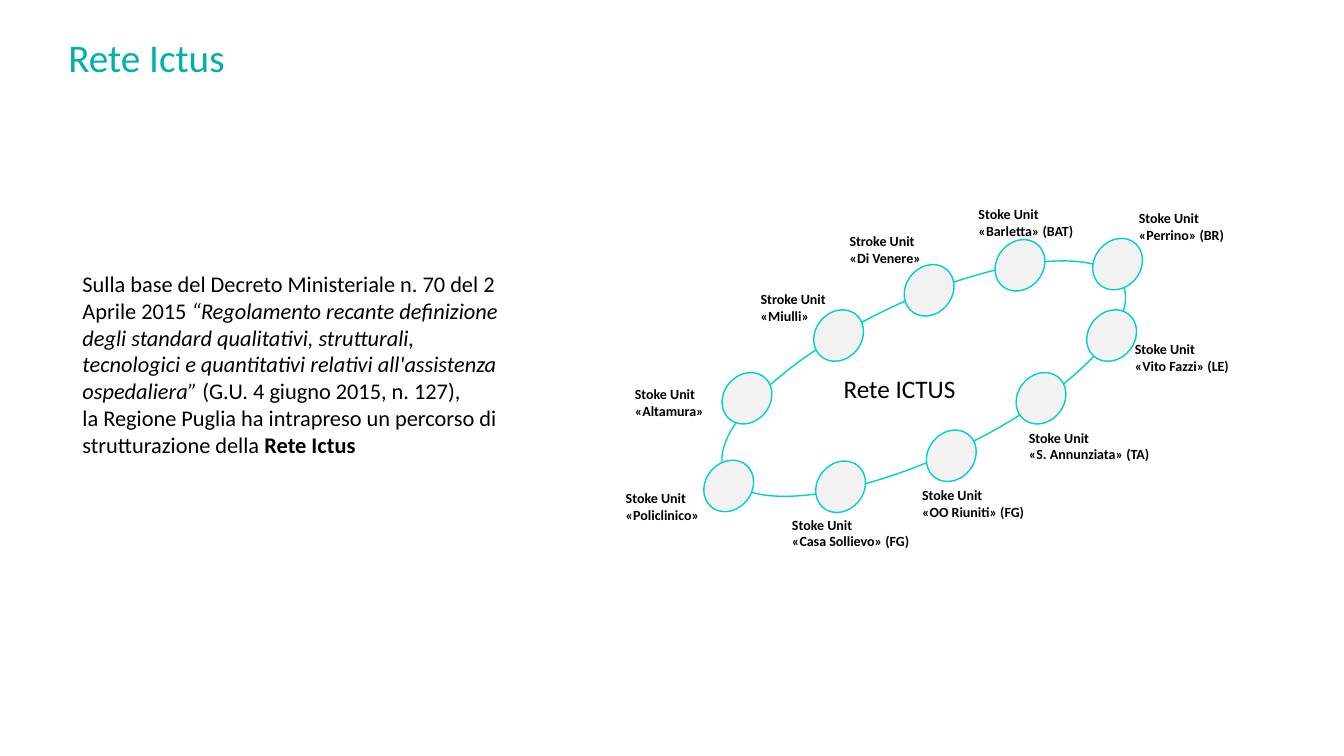
from pptx import Presentation
from pptx.dml.color import RGBColor
from pptx.enum.shapes import MSO_SHAPE
from pptx.enum.text import MSO_ANCHOR, MSO_AUTO_SIZE, PP_ALIGN
from pptx.util import Cm, Pt

TEAL = RGBColor(0x00, 0xB0, 0xAB)
AQUA = RGBColor(0x00, 0xD0, 0xCA)
PALE = RGBColor(0xF2, 0xF2, 0xF2)
BLACK = RGBColor(0x00, 0x00, 0x00)
FACE = "Calibri"

HEADING = "Rete Ictus"
DECREE = [
    [
        ("Sulla base del Decreto Ministeriale n. 70 del 2 Aprile 2015 ", ""),
        ("“Regolamento recante definizione degli standard qualitativi, strutturali, "
         "tecnologici e quantitativi relativi all'assistenza ospedaliera”", "italic"),
        (" (G.U. 4 giugno 2015, n. 127),", ""),
    ],
    [
        ("la Regione Puglia ha intrapreso un percorso di strutturazione della ", ""),
        ("Rete Ictus", "bold"),
    ],
]
NETWORK = "Rete ICTUS"
STROKE_UNITS = [
    ("Stoke Unit «Policlinico»", (17.68, 11.66), (15.52, 12.22, 3.07)),
    ("Stoke Unit «Altamura»", (18.14, 9.45), (15.75, 9.6, 3.07)),
    ("Stroke Unit\n«Miulli»", (20.45, 7.87), (18.92, 7.19, 3.07)),
    ("Stroke Unit\n«Di Venere»", (22.73, 6.73), (21.16, 5.74, 3.07)),
    ("Stoke Unit «Barletta» (BAT)", (25.02, 6.1), (24.41, 5.05, 3.53)),
    ("Stoke Unit «Perrino» (BR)", (27.48, 6.07), (28.45, 5.16, 3.07)),
    ("Stoke Unit\n«Vito Fazzi» (LE)", (27.33, 7.87), (28.35, 8.46, 3.38)),
    ("Stoke Unit\n«S. Annunziata» (TA)", (25.55, 9.45), (25.68, 10.69, 4.14)),
    ("Stoke Unit\n«OO Riuniti» (FG)", (23.29, 10.9), (22.99, 12.14, 4.14)),
    ("Stoke Unit\n«Casa Sollievo» (FG)", (20.5, 11.68), (19.71, 12.88, 4.14)),
]
NODE_WIDTH, NODE_HEIGHT, NODE_TURN = 1.37, 1.17, 309.2
LABEL_HEIGHT = 1.12


def style(paragraph, size, color=BLACK, bold=None):
    paragraph.font.name = FACE
    paragraph.font.size = Pt(size)
    paragraph.font.color.rgb = color
    paragraph.font.bold = bold


def add_oval(slide, left, top, width, height, turn, fill=None):
    oval = slide.shapes.add_shape(
        MSO_SHAPE.OVAL, Cm(left), Cm(top), Cm(width), Cm(height))
    oval.rotation = turn
    oval.shadow.inherit = False
    if fill is None:
        oval.fill.background()
    else:
        oval.fill.solid()
        oval.fill.fore_color.rgb = fill
    oval.line.color.rgb = AQUA
    oval.line.width = Pt(1)


def add_words(slide, left, top, width, height, words=""):
    frame = slide.shapes.add_textbox(
        Cm(left), Cm(top), Cm(width), Cm(height)).text_frame
    frame.word_wrap = True
    frame.text = words
    return frame


def add_heading(slide):
    heading = slide.shapes.title
    heading.left, heading.top = Cm(1.47), Cm(0.91)
    heading.width, heading.height = Cm(30.71), Cm(1.19)
    frame = heading.text_frame
    frame.text = HEADING
    frame.auto_size = MSO_AUTO_SIZE.NONE
    frame.vertical_anchor = MSO_ANCHOR.MIDDLE
    paragraph = frame.paragraphs[0]
    paragraph.alignment = PP_ALIGN.LEFT
    paragraph.line_spacing = 0.9
    style(paragraph, 28, TEAL)


def add_decree(slide):
    frame = add_words(slide, 1.83, 6.68, 11.25, 5.05)
    for index, passages in enumerate(DECREE):
        paragraph = frame.add_paragraph() if index else frame.paragraphs[0]
        style(paragraph, 16)
        for words, emphasis in passages:
            run = paragraph.add_run()
            run.text = words
            if emphasis == "italic":
                run.font.italic = True
            elif emphasis == "bold":
                run.font.bold = True


def add_network(slide):
    add_oval(slide, 17.73, 7.57, 11.1, 3.94, 334.7)
    for _, (left, top), _ in STROKE_UNITS:
        add_oval(slide, left, top, NODE_WIDTH, NODE_HEIGHT, NODE_TURN, PALE)
    center = add_words(slide, 21.01, 9.27, 4.52, 1.02, NETWORK)
    style(center.paragraphs[0], 18)
    for unit, _, (left, top, width) in STROKE_UNITS:
        label = add_words(slide, left, top, width, LABEL_HEIGHT, unit)
        for paragraph in label.paragraphs:
            style(paragraph, 10, bold=True)


def main():
    deck = Presentation()
    deck.slide_width, deck.slide_height = Cm(33.87), Cm(19.05)
    slide = deck.slides.add_slide(deck.slide_layouts[5])
    add_heading(slide)
    add_decree(slide)
    add_network(slide)
    deck.save("out.pptx")


if __name__ == "__main__":
    main()
